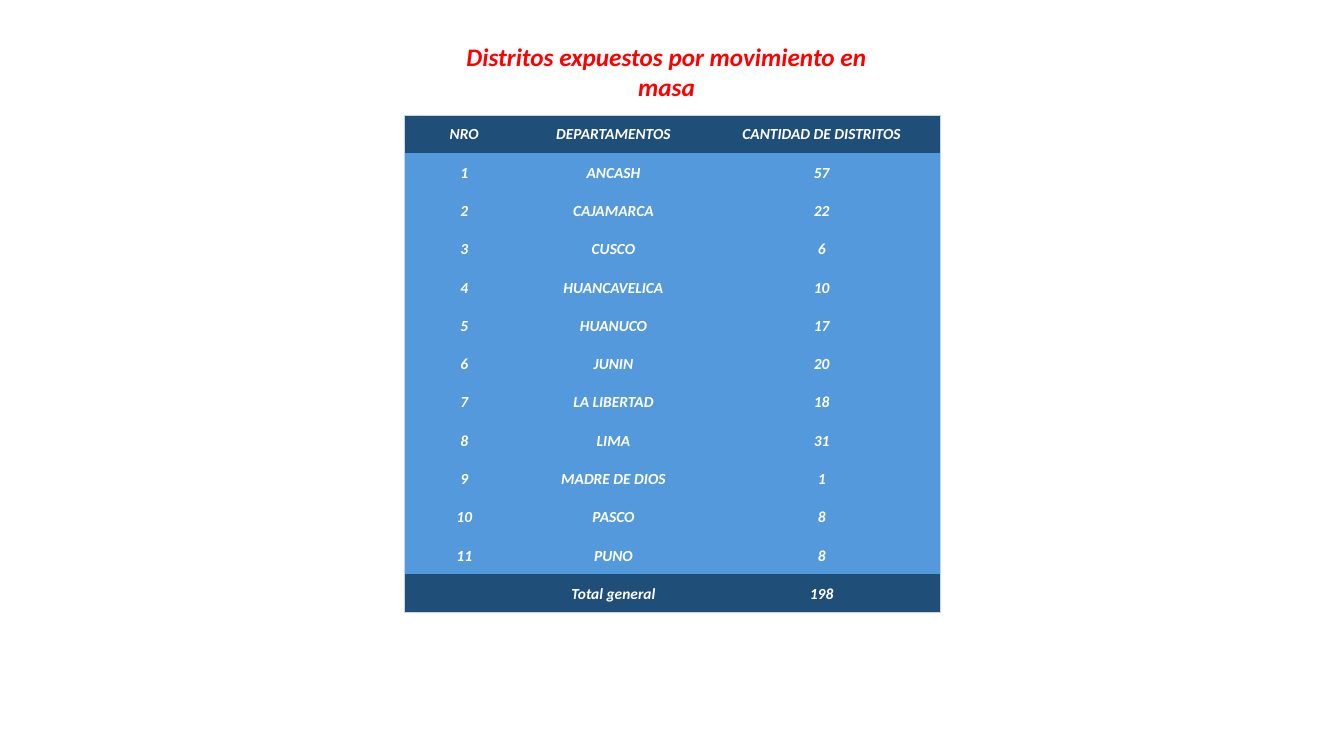
"""Build a slide with a table of districts exposed to mass movement."""
from lxml import etree
from pptx import Presentation
from pptx import util as u
from pptx.dml.color import RGBColor
from pptx.enum import text
from pptx.oxml import ns

COLOURS = {"title": "FF0000", "band": "1F4E79", "body": "5399DB",
           "border": "C4D5EB", "text": "FFFFFF"}
COLUMN_WIDTHS = [1.19, 1.77, 2.36]
ROW_HEIGHT = 0.38
DISTRICTS = [("ANCASH", 57), ("CAJAMARCA", 22), ("CUSCO", 6),
             ("HUANCAVELICA", 10), ("HUANUCO", 17), ("JUNIN", 20),
             ("LA LIBERTAD", 18), ("LIMA", 31), ("MADRE DE DIOS", 1),
             ("PASCO", 8), ("PUNO", 8)]


def write(frame, content, *, size, colour):
    """Write one centred bold italic paragraph."""
    para = frame.paragraphs[0]
    para.alignment = text.PP_ALIGN.CENTER
    span = para.add_run()
    span.text = content
    span.font.name = "Calibri"
    span.font.size = u.Pt(size)
    span.font.bold = span.font.italic = True
    span.font.color.rgb = RGBColor.from_string(COLOURS[colour])


def set_border(cell, side, visible):
    """Draw or clear one side of a cell."""
    line = etree.SubElement(cell._tc.get_or_add_tcPr(), ns.qn(f"a:ln{side}"))
    if visible:
        line.set("w", str(u.Pt(0.5)))
        fill = etree.SubElement(line, ns.qn("a:solidFill"))
        etree.SubElement(fill, ns.qn("a:srgbClr"), val=COLOURS["border"])
    else:
        line.set("w", "0")
        etree.SubElement(line, ns.qn("a:noFill"))


deck = Presentation()
deck.slide_width, deck.slide_height = u.Inches(13.33), u.Inches(7.5)
page = deck.slides.add_slide(deck.slide_layouts.get_by_name("Title Only"))

title = page.shapes.title
title.left, title.top = u.Inches(4.22), u.Inches(0.51)
title.width, title.height = u.Inches(4.78), u.Inches(0.4)
title.text_frame.word_wrap = False
title.text_frame.auto_size = text.MSO_AUTO_SIZE.SHAPE_TO_FIT_TEXT
write(title.text_frame, "Distritos expuestos por movimiento en masa",
      size=18, colour="title")

rows = [("NRO", "DEPARTAMENTOS", "CANTIDAD DE DISTRITOS")]
rows += [(number, *district) for number, district in enumerate(DISTRICTS, 1)]
rows.append(("", "Total general", sum(count for _, count in DISTRICTS)))
last_row, last_column = len(rows) - 1, len(COLUMN_WIDTHS) - 1

table = page.shapes.add_table(
    len(rows), len(COLUMN_WIDTHS), u.Inches(4.01), u.Inches(1.14),
    u.Inches(sum(COLUMN_WIDTHS)), u.Inches(ROW_HEIGHT * len(rows))).table
table.horz_banding = False
table.last_row = True
for column, width in zip(table.columns, COLUMN_WIDTHS):
    column.width = u.Inches(width)

for r, values in enumerate(rows):
    table.rows[r].height = u.Inches(ROW_HEIGHT)
    for c, value in enumerate(values):
        cell = table.cell(r, c)
        cell.vertical_anchor = text.MSO_ANCHOR.MIDDLE
        cell.margin_left = cell.margin_right = cell.margin_top = u.Inches(0.01)
        cell.margin_bottom = 0
        edges = {"L": c == 0, "R": c == last_column,
                 "T": r == 0, "B": r == last_row}
        for side, visible in edges.items():
            set_border(cell, side, visible)
        fill_name = "band" if r in (0, last_row) else "body"
        cell.fill.solid()
        cell.fill.fore_color.rgb = RGBColor.from_string(COLOURS[fill_name])
        if value != "":
            write(cell.text_frame, str(value), size=11, colour="text")

deck.save("out.pptx")
